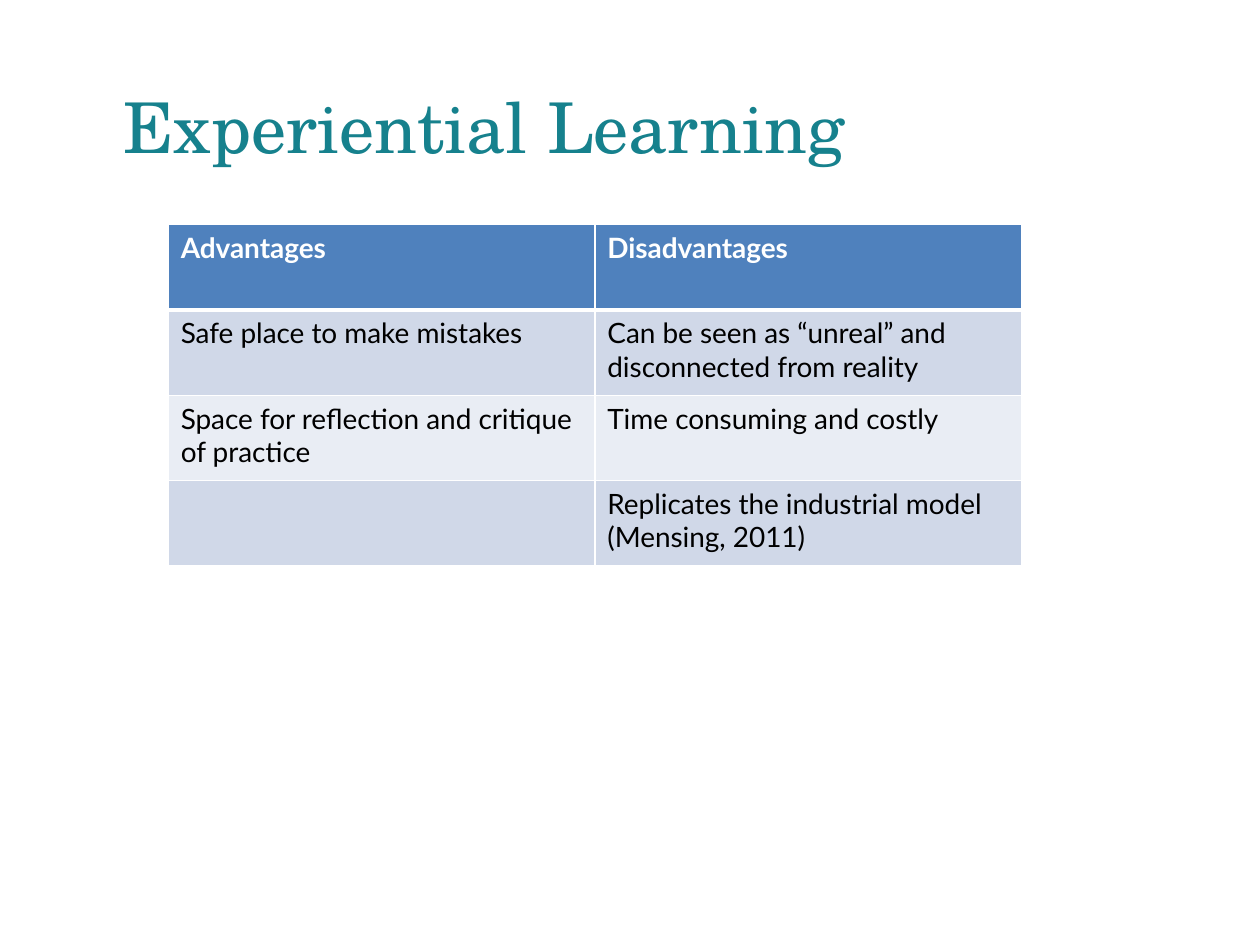
from dataclasses import dataclass

from lxml import etree
from pptx import Presentation
from pptx import util as u
from pptx.dml.color import RGBColor
from pptx.enum import text
from pptx.oxml.ns import qn

HUES = {
    "teal": "16818D", "head": "4F81BD", "dark": "D0D8E8",
    "light": "E9EDF4", "white": "FFFFFF", "black": "000000",
}


@dataclass
class Row:
    cells: tuple[str, str]
    fill: str
    ink: str = "black"
    bold: bool = False
    base: float = 1  # bottom border in points


ROWS = [
    Row(("Advantages", "Disadvantages"), "head", "white", True, 3),
    Row(("Safe place to make mistakes",
         "Can be seen as “unreal” and disconnected from reality"), "dark"),
    Row(("Space for reflection and critique of practice",
         "Time consuming and costly"), "light"),
    Row(("", "Replicates the industrial model (Mensing, 2011)"), "dark"),
]


def add_run(para, words: str, face: str, size: float, ink: str, bold: bool = False) -> None:
    run = para.add_run()
    run.text = words
    run.font.name = face
    run.font.size = u.Pt(size)
    run.font.bold = bold
    run.font.color.rgb = RGBColor.from_string(HUES[ink])


def add_edge(cell, side: str, width: float) -> None:
    props = cell._tc.get_or_add_tcPr()
    line = etree.SubElement(props, qn("a:ln" + side), w=str(u.Pt(width)))
    fill = etree.SubElement(line, qn("a:solidFill"))
    etree.SubElement(fill, qn("a:srgbClr"), val=HUES["white"])


def draw_title(slide, words: str) -> None:
    box = slide.shapes.add_textbox(u.Cm(2.49), u.Cm(1.9), u.Cm(18.1), u.Cm(1.8))
    frame = box.text_frame
    frame.word_wrap = True
    frame.vertical_anchor = text.MSO_ANCHOR.TOP
    frame.margin_left = frame.margin_right = u.Cm(0)
    frame.margin_top = frame.margin_bottom = u.Cm(0)
    para = frame.paragraphs[0]
    para.line_spacing = u.Pt(42)
    add_run(para, words, "TeX Gyre Schola", 40, "teal")


def draw_table(slide, rows: list[Row]) -> None:
    wide, high = 8.6, 1.72
    table = slide.shapes.add_table(
        len(rows), 2, u.Cm(3.39), u.Cm(4.53), u.Cm(2 * wide), u.Cm(high * len(rows))
    ).table
    for i, row in enumerate(rows):
        # The edge between two rows has one width
        top = rows[i - 1].base if i else 1
        for j, words in enumerate(row.cells):
            cell = table.cell(i, j)
            for side, width in zip("LRTB", (1, 1, top, row.base)):
                add_edge(cell, side, width)
            cell.fill.solid()
            cell.fill.fore_color.rgb = RGBColor.from_string(HUES[row.fill])
            para = cell.text_frame.paragraphs[0]
            if words:
                add_run(para, words, "Lato", 16, row.ink, row.bold)


def main() -> None:
    deck = Presentation()
    deck.slide_width, deck.slide_height = u.Cm(25.4), u.Cm(19.05)
    slide = deck.slides.add_slide(deck.slide_layouts[6])
    # Heading
    draw_title(slide, "Experiential Learning")
    # Comparison table
    draw_table(slide, ROWS)
    deck.save("out.pptx")


if __name__ == "__main__":
    main()
